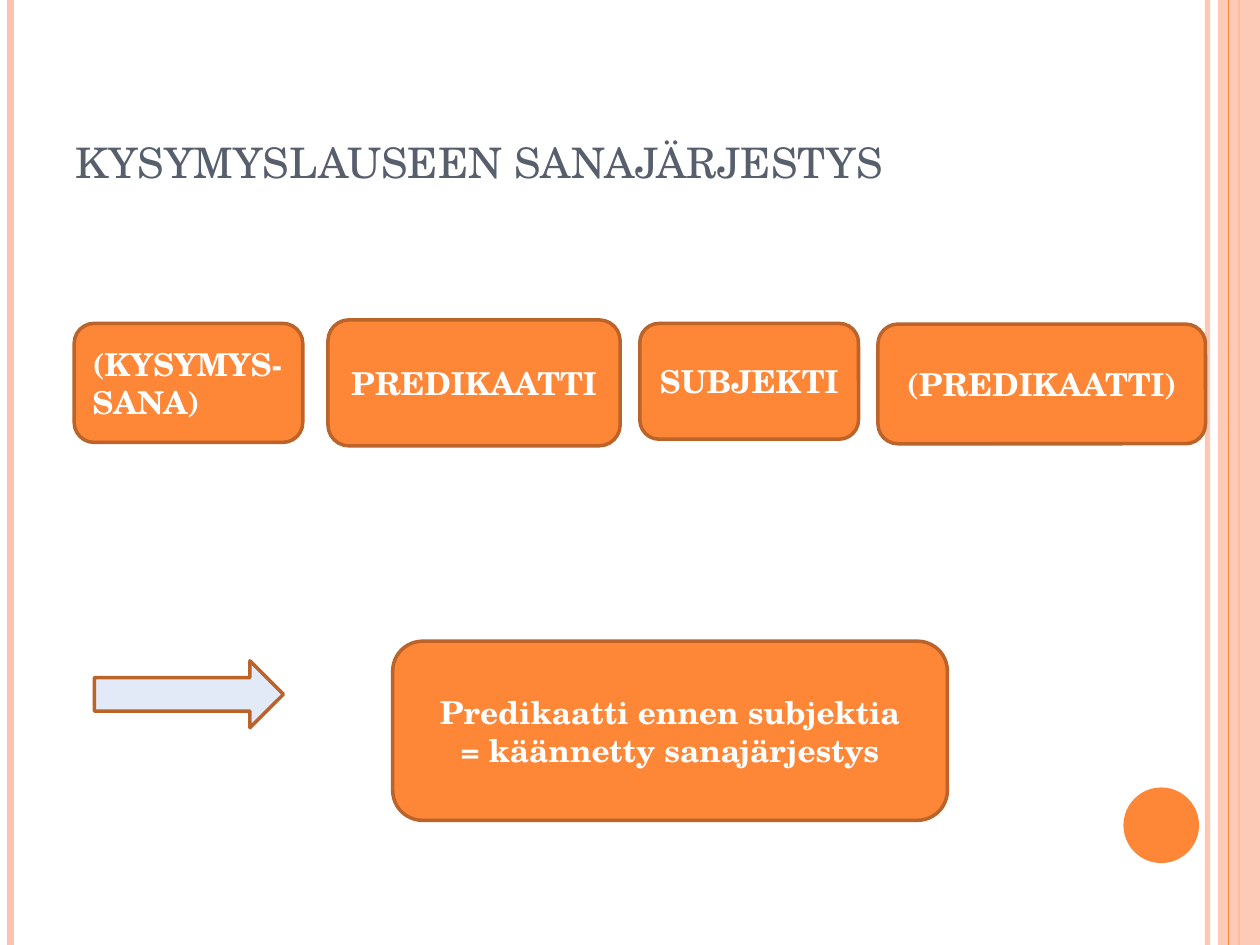
from lxml import etree
from pptx import Presentation
from pptx.dml.color import RGBColor
from pptx.enum.shapes import MSO_CONNECTOR, MSO_SHAPE
from pptx.enum.text import MSO_ANCHOR, PP_ALIGN
from pptx.oxml.ns import qn
from pptx.util import Pt

STRAIGHT = MSO_CONNECTOR.STRAIGHT
RECT, OVAL = MSO_SHAPE.RECTANGLE, MSO_SHAPE.OVAL
ROUNDED, ARROW = MSO_SHAPE.ROUNDED_RECTANGLE, MSO_SHAPE.RIGHT_ARROW
LEFT, CENTER = PP_ALIGN.LEFT, PP_ALIGN.CENTER
MIDDLE, BOTTOM = MSO_ANCHOR.MIDDLE, MSO_ANCHOR.BOTTOM

WIDTH, HEIGHT = 720, 540
FONT = "TeX Gyre Schola"
COLORS = {
    "background": "FFFFFF",
    "band": "FEC3AE",
    "accent": "FE8637",
    "outline": "BC6329",
    "title": "575F6D",
    "arrow": "E3EAF7",
    "label": "FFFFFF",
}


def rgb(name):
    return RGBColor.from_string(COLORS[name])


def set_opacity(paint, percent):
    """Add an alpha value to the colour of a solid fill or line."""
    color = next(paint.iter(qn("a:srgbClr")))
    etree.SubElement(color, qn("a:alpha"), val=str(percent * 1000))


def write_text(shape, text, size=18, color="label", bold=False,
               align=CENTER, anchor=MIDDLE, small_caps=False):
    """Fill a shape with text; each line of it becomes a paragraph."""
    frame = shape.text_frame
    frame.word_wrap = True
    frame.vertical_anchor = anchor
    frame.text = text
    for paragraph in frame.paragraphs:
        paragraph.alignment = align
        for run in paragraph.runs:
            run.font.name = FONT
            run.font.size = Pt(size)
            run.font.bold = bold
            run.font.color.rgb = rgb(color)
            if small_caps:
                run.font._element.set("cap", "small")


class SlideBuilder:
    def __init__(self, slide):
        self.slide = slide
        self.outline_width = 2
        background = slide.background.fill
        background.solid()
        background.fore_color.rgb = rgb("background")

    def vertical_rule(self, x, color, width, opacity=100):
        rule = self.slide.shapes.add_connector(
            STRAIGHT, Pt(x), Pt(0), Pt(x), Pt(HEIGHT))
        rule.line.color.rgb = rgb(color)
        rule.line.width = Pt(width)
        properties = rule._element.spPr
        etree.SubElement(properties, qn("a:effectLst"))
        if opacity < 100:
            set_opacity(properties, opacity)

    def shape(self, kind, box, fill="accent", outline=None, opacity=100):
        shape = self.slide.shapes.add_shape(kind, *map(Pt, box))
        shape.shadow.inherit = False
        shape.fill.solid()
        shape.fill.fore_color.rgb = rgb(fill)
        if opacity < 100:
            set_opacity(shape._element.spPr, opacity)
        if outline:
            shape.line.color.rgb = rgb(outline)
            shape.line.width = Pt(self.outline_width)
        else:
            shape.line.fill.background()
        return shape

    def label_box(self, text, box, align=CENTER):
        shape = self.shape(ROUNDED, box, outline="outline")
        write_text(shape, text, bold=True, align=align)

    def title(self, text, box):
        title = self.slide.shapes.add_textbox(*map(Pt, box))
        write_text(title, text, size=30, color="title", align=LEFT,
                   anchor=BOTTOM, small_caps=True)


def main():
    presentation = Presentation()
    presentation.slide_width = Pt(WIDTH)
    presentation.slide_height = Pt(HEIGHT)
    page = SlideBuilder(
        presentation.slides.add_slide(presentation.slide_layouts[6]))

    page.vertical_rule(690, "band", 3, opacity=93)
    page.vertical_rule(6, "band", 4.5)
    page.vertical_rule(708, "accent", 1.5)
    page.shape(RECT, (696, 0, 24, HEIGHT), fill="band", opacity=87)
    page.vertical_rule(702, "accent", 0.75)
    page.shape(OVAL, (642, 450, 43.2, 43.2))

    page.title("kysymyslauseen sanajärjestys", (36, 21.6, 588, 90))

    word_order = [
        ("(KYSYMYS-SANA)", (42.4, 184.8, 130.6, 68), LEFT),
        ("PREDIKAATTI", (187.4, 182.8, 167, 72), CENTER),
        ("SUBJEKTI", (365.6, 184.8, 125, 66.2), CENTER),
        ("(PREDIKAATTI)", (501.7, 185.2, 187.2, 68.4), CENTER),
    ]
    for text, box, align in word_order:
        page.label_box(text, box, align)

    page.shape(ARROW, (54, 377.6, 108, 38.3), fill="arrow", outline="outline")
    page.label_box("Predikaatti ennen subjektia\n= käännetty sanajärjestys",
                   (224.4, 366.4, 317, 102.4))

    presentation.save("out.pptx")


if __name__ == "__main__":
    main()
